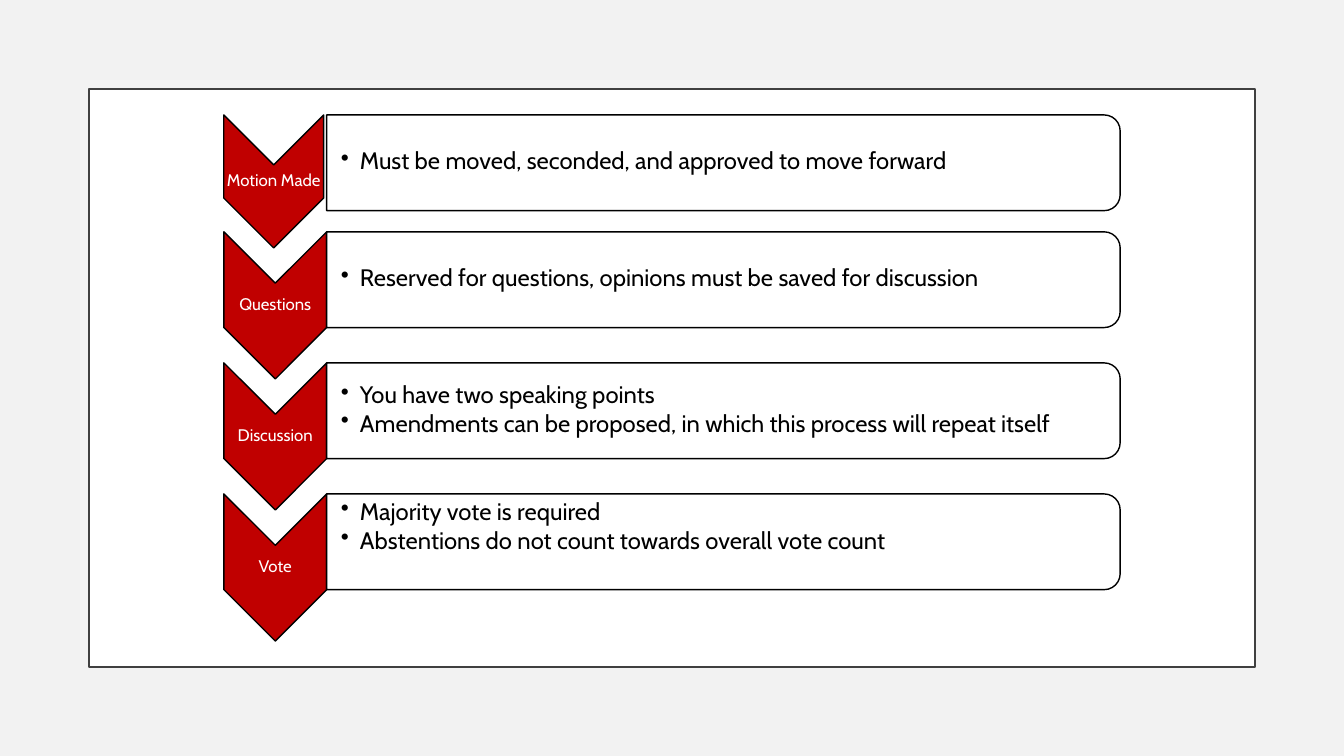
from pptx import Presentation
from pptx.dml.color import RGBColor
from pptx.enum import shapes, text
from pptx.oxml.ns import qn
from pptx.util import Inches, Pt
from lxml import etree

GRAY = RGBColor(0xF2, 0xF2, 0xF2)
EDGE = RGBColor(0x40, 0x40, 0x40)
RED = RGBColor(0xC0, 0x00, 0x00)
BLACK = RGBColor(0x00, 0x00, 0x00)
WHITE = RGBColor(0xFF, 0xFF, 0xFF)
FONT = "Cabin"
LEFT = 2.22
KIND = shapes.MSO_SHAPE

STEPS = [
    ("Motion Made", 1.14, 0.99, 1.32, 0.01,
     ["Must be moved, seconded, and approved to move forward"]),
    ("Questions", 2.3, 1.02, 1.46, 0.01,
     ["Reserved for questions, opinions must be saved for discussion"]),
    ("Discussion", 3.6, 1.02, 1.46, 0.01,
     ["You have two speaking points",
      "Amendments can be proposed, in which this process will repeat itself"]),
    ("Vote", 4.9, 1.02, 1.46, 0.29,
     ["Majority vote is required",
      "Abstentions do not count towards overall vote count"]),
]


def add_box(slide, kind, left, top, width, height, fill, edge, weight):
    box = slide.shapes.add_shape(
        kind, Inches(left), Inches(top), Inches(width), Inches(height))
    box.shadow.inherit = False
    box.fill.solid()
    box.fill.fore_color.rgb = fill
    box.line.color.rgb = edge
    box.line.width = Pt(weight)
    return box


def add_turned(slide, kind, left, top, width, height, fill):
    shift = (width - height) / 2
    box = add_box(slide, kind, left + shift, top - shift,
                  height, width, fill, BLACK, 1)
    box.rotation = 90
    return box


def add_frame(slide, left, top, width, height, inset, base):
    box = slide.shapes.add_textbox(
        Inches(left), Inches(top), Inches(width), Inches(height))
    frame = box.text_frame
    frame.word_wrap = True
    frame.vertical_anchor = text.MSO_ANCHOR.MIDDLE
    frame.margin_left = Inches(inset)
    frame.margin_top = frame.margin_right = Inches(0.01)
    frame.margin_bottom = Inches(base)
    return frame


def add_run(para, words, size, color, after):
    para.line_spacing = 0.9
    para.space_after = Pt(after)
    run = para.add_run()
    run.text = words
    run.font.name = FONT
    run.font.size = Pt(size)
    run.font.color.rgb = color


def set_bullet(para):
    props = para._p.get_or_add_pPr()
    props.set("marL", str(Inches(0.19)))
    props.set("indent", str(-Inches(0.19)))
    etree.SubElement(props, qn("a:buChar")).set("char", "•")


def add_label(slide, name, top, width, height):
    add_turned(slide, KIND.CHEVRON, LEFT, top, width, height, RED)
    frame = add_frame(slide, LEFT, top + width / 2, width,
                      height - width, 0.01, 0.01)
    para = frame.paragraphs[0]
    para.alignment = text.PP_ALIGN.CENTER
    add_run(para, name, 12, WHITE, 4.2)


def add_list(slide, top, base, items):
    panel = add_turned(slide, KIND.ROUND_2_SAME_RECTANGLE,
                       3.24, top, 7.87, 0.95, WHITE)
    color = panel.fill._xPr.find(qn("a:solidFill"))[0]
    etree.SubElement(color, qn("a:alpha")).set("val", "90000")
    frame = add_frame(slide, 3.25, top + 0.04, 7.82, 0.86, 0.13, base)
    for i, item in enumerate(items):
        para = frame.add_paragraph() if i else frame.paragraphs[0]
        add_run(para, item, 17, BLACK, 2.2)
        set_bullet(para)


def main():
    deck = Presentation()
    deck.slide_width = Inches(13.33)
    deck.slide_height = Inches(7.5)
    slide = deck.slides.add_slide(deck.slide_layouts[6])
    slide.background.fill.solid()
    slide.background.fill.fore_color.rgb = GRAY
    add_box(slide, KIND.RECTANGLE, 0.88, 0.88, 11.57, 5.74, WHITE, EDGE, 1.5)
    for name, top, width, height, base, items in STEPS:
        add_label(slide, name, top, width, height)
        add_list(slide, top, base, items)
    deck.save("out.pptx")


if __name__ == "__main__":
    main()
